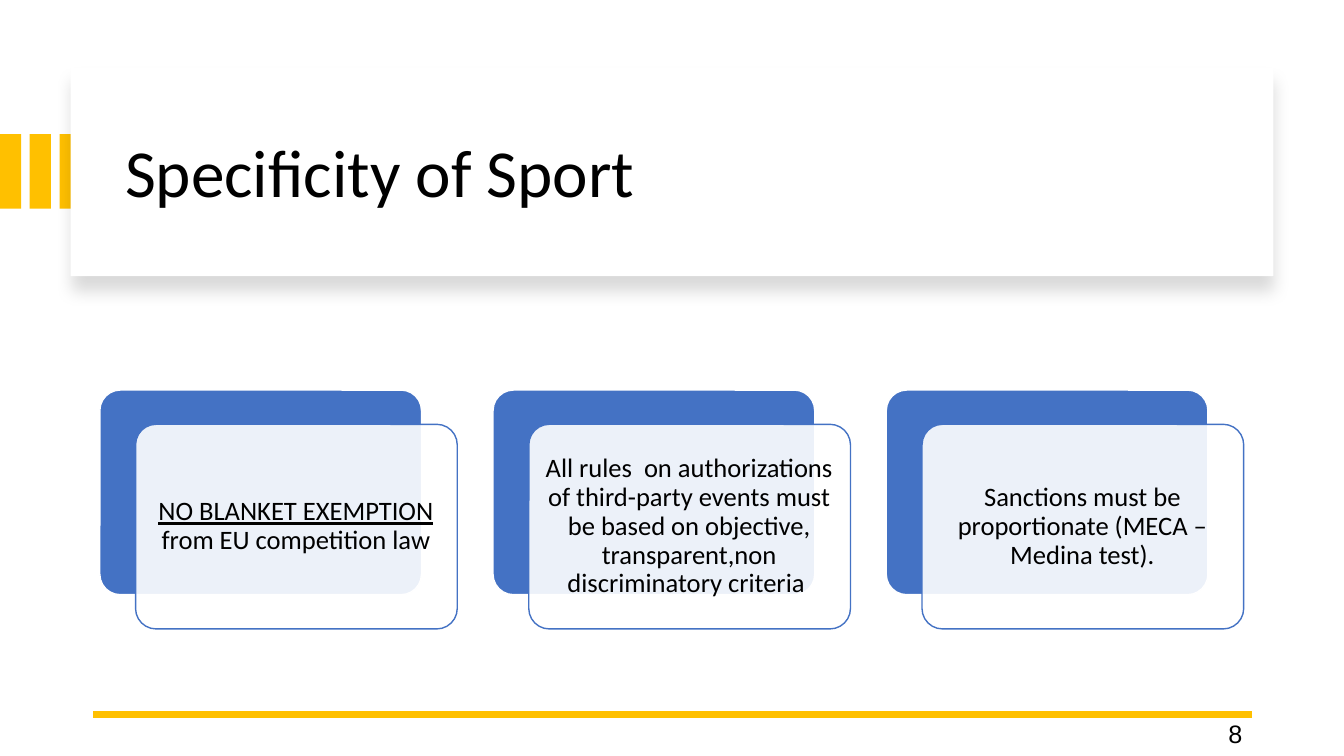
from lxml import etree
from pptx import Presentation
from pptx.dml.color import RGBColor
from pptx.enum.shapes import MSO_CONNECTOR as Link, MSO_SHAPE as Shape
from pptx.enum.text import MSO_ANCHOR as Anchor, PP_ALIGN as Align
from pptx.oxml.ns import qn
from pptx.util import Inches, Pt

GOLD = RGBColor(0xFF, 0xC0, 0x00)
BLUE = RGBColor(0x44, 0x72, 0xC4)
WHITE = RGBColor(0xFF, 0xFF, 0xFF)
BLACK = RGBColor(0x00, 0x00, 0x00)


def write(frame, *parts, size=19, font="Calibri", align=Align.LEFT,
          after=0, inset=None):
    """Fill a frame with one paragraph; each part is (text, underlined)."""
    frame.word_wrap = True
    frame.vertical_anchor = Anchor.MIDDLE
    if inset is not None:
        frame.margin_left = frame.margin_right = Inches(inset)
        frame.margin_top = frame.margin_bottom = Inches(inset)
    para = frame.paragraphs[0]
    para.alignment = align
    para.line_spacing = 0.9
    para.space_after = Pt(after)
    for text, under in parts:
        run = para.add_run()
        run.text = text
        run.font.size = Pt(size)
        run.font.name = font
        run.font.color.rgb = BLACK
        run.font.underline = under


class Page:
    def __init__(self, slide):
        self.slide = slide
        self.shapes = slide.shapes

    def title(self, text, *box):
        title = self.shapes.title
        title.left, title.top, title.width, title.height = map(Inches, box)
        write(title.text_frame, (text, False), size=48)
        # Bring the title in front of the panel
        tree = title.element.getparent()
        tree.append(title.element)

    def block(self, kind, box, fill, line=None, alpha=None):
        shape = self.shapes.add_shape(kind, *map(Inches, box))
        shape.shadow.inherit = False
        shape.fill.solid()
        shape.fill.fore_color.rgb = fill
        if line is None:
            shape.line.fill.background()
        else:
            shape.line.color.rgb = line
            shape.line.width = Pt(1)
        if kind == Shape.ROUNDED_RECTANGLE:
            shape.adjustments[0] = 0.1
        if alpha is not None:
            self.fade(shape.element.spPr.find(qn("a:solidFill"))[0], alpha)
        return shape

    def fade(self, color, alpha):
        etree.SubElement(color, qn("a:alpha"), val=str(alpha * 1000))

    def shade(self, shape, alpha, blur, dist):
        effects = shape.element.spPr.find(qn("a:effectLst"))
        outer = etree.SubElement(
            effects, qn("a:outerShdw"), blurRad=str(Pt(blur)),
            dist=str(Pt(dist)), dir="5400000", algn="t", rotWithShape="0")
        color = etree.SubElement(outer, qn("a:srgbClr"), val=str(BLACK))
        self.fade(color, alpha)

    def text(self, box, *parts, **style):
        area = self.shapes.add_textbox(*map(Inches, box))
        write(area.text_frame, *parts, **style)

    def rule(self, left, right, top):
        line = self.shapes.add_connector(
            Link.STRAIGHT, Inches(right), Inches(top), Inches(left), Inches(top))
        line.line.color.rgb = GOLD
        line.line.width = Pt(4.5)
        etree.SubElement(line.element.spPr, qn("a:effectLst"))

    def card(self, left, *parts):
        top, width, height = 3.87, 3.19, 2.03
        kind = Shape.ROUNDED_RECTANGLE
        self.block(kind, (left, top, width, height), BLUE, WHITE)
        self.block(kind, (left + 0.355, top + 0.34, width, height),
                   WHITE, BLUE, alpha=90)
        self.text((left + 0.41, top + 0.4, width - 0.12, height - 0.12), *parts,
                  align=Align.CENTER, after=6.65, inset=0.08)


def main():
    deck = Presentation()
    deck.slide_width, deck.slide_height = Inches(13.33), Inches(7.5)
    page = Page(deck.slides.add_slide(deck.slide_layouts[5]))

    # Gold bars and title panel
    for i in range(3):
        page.block(Shape.RECTANGLE, (i * 0.295, 1.33, 0.21, 0.74), GOLD)
    panel = page.block(Shape.RECTANGLE, (0.7, 0.67, 11.93, 2.07), WHITE)
    page.shade(panel, alpha=15, blur=11, dist=10)
    page.title("Specificity of Sport", 1.14, 0.89, 11.13, 1.7)

    # Footer rule and page number
    page.rule(0.92, 12.42, 7.09)
    page.text((9.42, 7.1, 3, 0.4), ("8", False), size=18, font="Arial",
              align=Align.RIGHT, after=6)

    # Three cards
    cards = [
        [("NO BLANKET EXEMPTION", True), (" from EU competition law", False)],
        [("All rules  on authorizations of third-party events must be based on "
          "objective, transparent,non discriminatory criteria ", False)],
        [("Sanctions must be proportionate (MECA –Medina test).", False)],
    ]
    for i, parts in enumerate(cards):
        page.card(0.99 + i * 3.9, *parts)

    deck.save("out.pptx")


if __name__ == "__main__":
    main()
